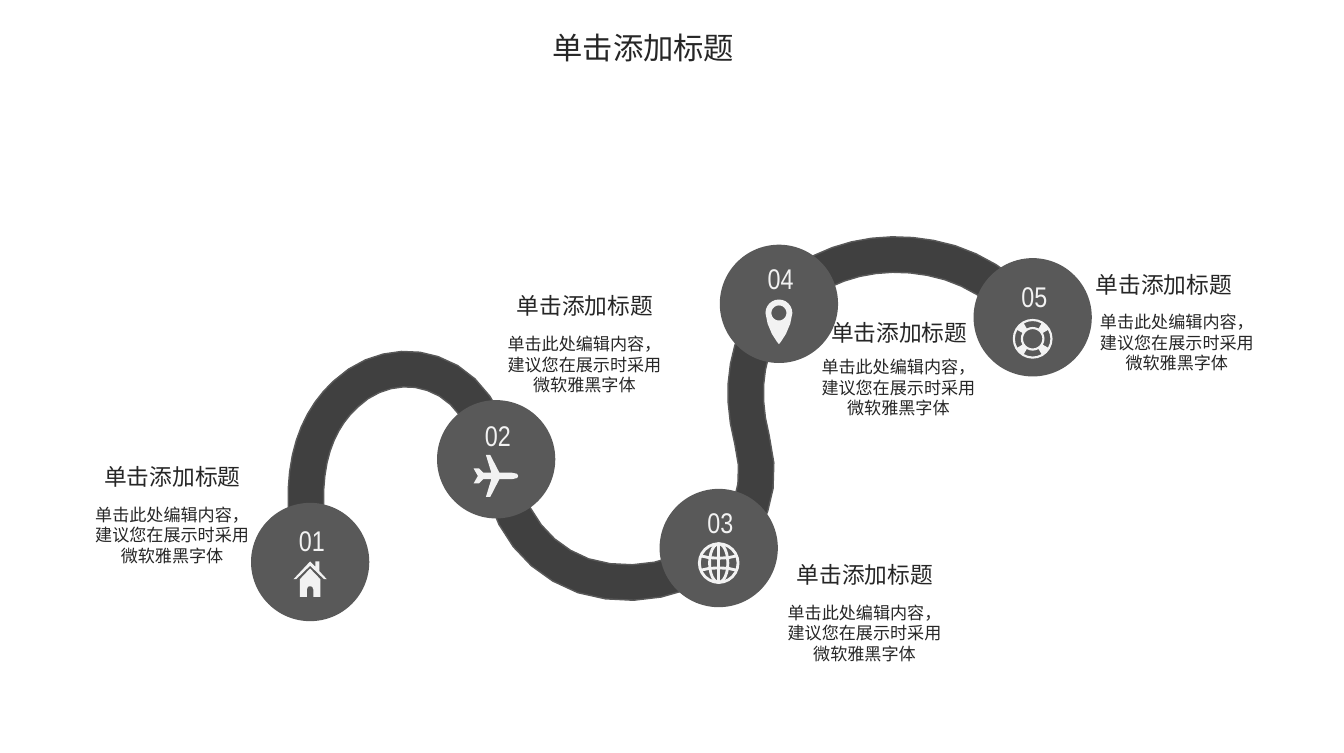
import math
from dataclasses import dataclass

from pptx import Presentation
from pptx import util as u
from pptx.dml.color import RGBColor
from pptx.enum import lang, shapes, text


@dataclass(frozen=True)
class Theme:
    road: RGBColor = RGBColor(0x40, 0x40, 0x40)
    disc: RGBColor = RGBColor(0x59, 0x59, 0x59)
    light: RGBColor = RGBColor(0xF2, 0xF2, 0xF2)
    ink: RGBColor = RGBColor(0x26, 0x26, 0x26)
    title: int = 16
    number: int = 15
    heading: int = 12
    body: int = 9


theme = Theme()
CJK, LATIN, NARROW = "Noto Sans CJK SC", "Lato", "Arial Narrow"
HEADING = "单击添加标题"
BODY = "单击此处编辑内容，建议您在展示时采用微软雅黑字体"

prs = Presentation()
prs.slide_width, prs.slide_height = u.Cm(25), u.Cm(14)
s = prs.slides.add_slide(prs.slide_layouts[6])


def add_outline(contours, x=0, y=0, fill=None, line=None, weight=0.75):
    """Draw closed contours, given in cm from (x, y), as one shape; inner ones are holes."""
    builder = None
    for contour in contours:
        points = [(u.Cm(x + px), u.Cm(y + py)) for px, py in contour]
        if builder is None:
            builder = s.shapes.build_freeform(*points[0])
        else:
            builder.move_to(*points[0])
        builder.add_line_segments(points[1:], close=True)
    sp = builder.convert_to_shape()
    sp.shadow.inherit = False
    if fill is None:
        sp.fill.background()
    else:
        sp.fill.solid()
        sp.fill.fore_color.rgb = fill
    if line is None:
        sp.line.fill.background()
    else:
        sp.line.color.rgb = line
        sp.line.width = u.Pt(weight)


def add_label(box, words, font, size, color, align=text.PP_ALIGN.CENTER,
              anchor=text.MSO_ANCHOR.TOP, margins=(0, 0), wrap=True):
    tf = s.shapes.add_textbox(*map(u.Cm, box)).text_frame
    tf.word_wrap = wrap
    tf.vertical_anchor = anchor
    tf.margin_left = tf.margin_right = u.Cm(margins[0])
    tf.margin_top = tf.margin_bottom = u.Cm(margins[1])
    tf.text = words
    p = tf.paragraphs[0]
    p.alignment = align
    f = p.runs[0].font
    f.name, f.size, f.color.rgb = font, u.Pt(size), color
    f.language_id = lang.MSO_LANGUAGE_ID.SIMPLIFIED_CHINESE


# Road: cubic curves along the left edge, the right edge runs parallel to it
ROAD_WIDTH = 0.66
STEPS = 6
road = [
    (5.54, 10.46), (5.33, 9.75), (5.31, 9.07),
    (5.44, 8.46), (5.56, 7.9), (5.82, 7.44),
    (6.2, 7.09), (6.73, 6.58), (7.49, 6.4),
    (8.15, 6.63), (8.92, 6.88), (9.45, 7.65),
    (9.63, 8.69), (9.75, 9.53), (10.24, 10.13),
    (10.95, 10.39), (11.73, 10.64), (12.67, 10.46),
    (13.23, 9.93), (13.56, 9.63), (13.89, 9.09),
    (13.67, 8.26), (13.46, 7.47), (13.51, 6.73),
    (13.79, 6.1), (14.07, 5.51), (14.53, 5.05),
    (15.14, 4.75), (15.8, 4.42), (16.59, 4.32),
    (17.37, 4.47), (18.19, 4.62), (18.92, 5.08),
    (19.48, 5.77),
]
left_edge, right_edge = [], []
for i in range(0, len(road) - 1, 3):
    a, b, c, d = road[i:i + 4]
    for t in (n / STEPS for n in range(STEPS)):
        v = 1 - t
        x, y = (v**3 * a[k] + 3 * v * v * t * b[k] + 3 * v * t * t * c[k] + t**3 * d[k]
                for k in (0, 1))
        dx, dy = (v * v * (b[k] - a[k]) + 2 * v * t * (c[k] - b[k]) + t * t * (d[k] - c[k])
                  for k in (0, 1))
        reach = ROAD_WIDTH / math.hypot(dx, dy)
        left_edge.append((x, y))
        right_edge.append((x - dy * reach, y + dx * reach))
add_outline([left_edge + right_edge[::-1]], fill=theme.road, line=theme.disc)

# Icons, in cm around their centres; the unit circle runs clockwise in 15° steps
circle = [(math.cos(math.radians(a)), math.sin(math.radians(a))) for a in range(0, 360, 15)]

roof = [(0, -0.33), (0.1, -0.23), (0.1, -0.33), (0.17, -0.33), (0.17, -0.15),
        (0.31, 0), (0.26, 0), (0, -0.25), (-0.26, 0), (-0.31, 0)]
walls = [(0, -0.2), (0.19, 0), (0.19, 0.33), (0.06, 0.33), (0.06, 0.19), (0.04, 0.14),
         (0, 0.13), (-0.04, 0.14), (-0.06, 0.19), (-0.06, 0.33), (-0.19, 0.33), (-0.19, 0)]

wing = [(0.41, 0), (0.39, -0.04), (0.29, -0.06), (0.06, -0.06), (-0.11, -0.39),
        (-0.19, -0.39), (-0.09, -0.06), (-0.24, -0.06), (-0.32, -0.14),
        (-0.42, -0.14), (-0.34, 0)]
plane = wing + [(px, -py) for px, py in wing[-2:0:-1]]

globe = [[(rx * cx, 0.36 * cy) for cx, cy in circle] for rx in (0.36, 0.17)]
globe.append([(0, -0.36), (0, 0.36)])
for side in (-1, 1):
    parallel = [(px, side * py) for px, py in
                ((-0.32, 0.13), (-0.18, 0.1), (0, 0.09), (0.18, 0.1), (0.32, 0.13))]
    globe.append(parallel + parallel[-2:0:-1])

pin_side = [(0.25, 0), (0.21, 0.2), (0.13, 0.39), (0.04, 0.53), (0, 0.58)]
pin = [[(0.25 * cx, 0.25 * cy) for cx, cy in circle[13:]]
       + pin_side + [(-px, py) for px, py in pin_side[-2::-1]],
       [(0.14 * cx, 0.14 * cy) for cx, cy in circle]]

buoy = [[(r * cx, r * cy) for cx, cy in circle] for r in (0.37, 0.18)]
for quarter in range(0, 24, 6):
    arc = [circle[(quarter + n) % 24] for n in range(-2, 3)]
    buoy.append([(0.33 * cx, 0.33 * cy) for cx, cy in arc]
                + [(0.22 * cx, 0.22 * cy) for cx, cy in arc[::-1]])

solid = dict(fill=theme.light)
stroked = dict(line=theme.light, weight=1.5)

# Stops: disc corner, number and icon drop inside it, icon, heading and body corners
DISC = 2.2
stops = [
    ((4.67, 9.35), 0.38, 1.42, [roof, walls], solid, (1.14, 8.59), (1.75, 9.37)),
    ((8.13, 7.44), 0.33, 1.41, [plane], solid, (8.81, 5.41), (9.42, 6.2)),
    ((12.27, 9.09), 0.3, 1.38, globe, stroked, (14.02, 10.41), (14.63, 11.2)),
    ((13.39, 4.55), 0.3, 1.27, pin, solid, (14.66, 5.92), (15.26, 6.63)),
    ((18.11, 4.8), 0.38, 1.5, buoy, solid, (19.58, 5.03), (20.44, 5.79)),
]
for number, ((x, y), number_drop, icon_drop, icon, style, heading, body) in enumerate(stops, 1):
    disc = s.shapes.add_shape(shapes.MSO_SHAPE.OVAL, *map(u.Cm, (x, y, DISC, DISC)))
    disc.shadow.inherit = False
    disc.fill.solid()
    disc.fill.fore_color.rgb = theme.disc
    disc.line.fill.background()
    add_outline(icon, x + DISC / 2, y + icon_drop, **style)
    add_label((x + 0.89, y + number_drop, 0.53, 0.64), f"{number:02}", NARROW,
              theme.number, theme.light, align=text.PP_ALIGN.LEFT, wrap=False)
    add_label((*heading, 4.14, 0.53), HEADING, CJK, theme.heading, theme.ink,
              anchor=text.MSO_ANCHOR.MIDDLE, margins=(0.18, 0.1))
    add_label((*body, 2.9, 1.14), BODY, LATIN, theme.body, theme.ink)

add_label((10.03, 0.41, 8.26, 0.94), HEADING, CJK, theme.title, theme.ink,
          align=text.PP_ALIGN.LEFT, margins=(0.25, 0.13))

prs.save("out.pptx")
